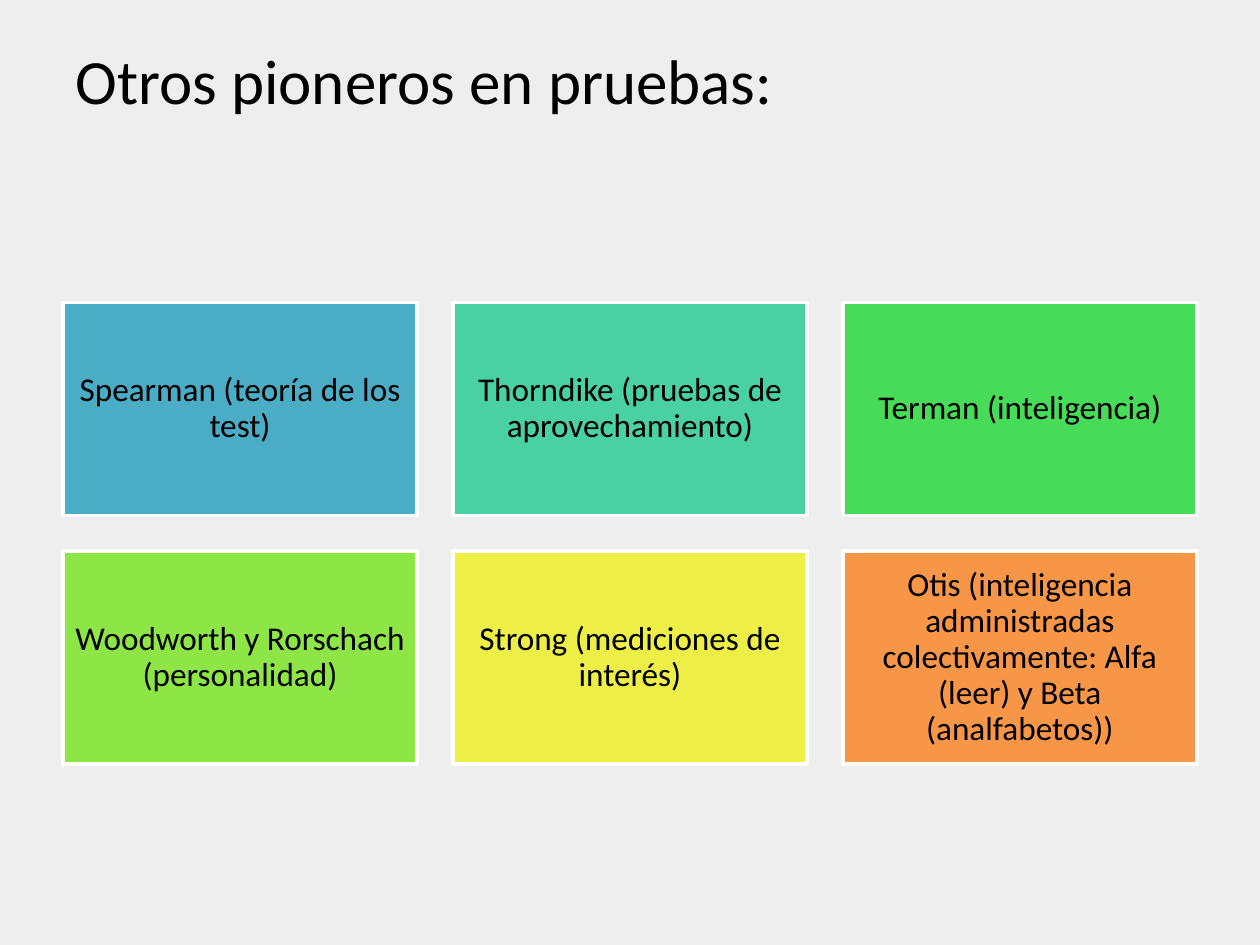
from dataclasses import dataclass

from pptx import Presentation
from pptx.dml.color import RGBColor
from pptx.enum.shapes import MSO_SHAPE
from pptx.enum.text import MSO_ANCHOR, PP_ALIGN
from pptx.util import Cm, Pt


@dataclass(frozen=True)
class Theme:
    font: str = "Calibri"
    ink: str = "000000"
    back: str = "EEEEEE"
    edge: str = "FFFFFF"
    head: int = 36
    body: int = 19


THEME = Theme()

# Card text and fill, row by row
CARDS = [
    ("Spearman (teoría de los test)", "4BACC6"),
    ("Thorndike (pruebas de aprovechamiento)", "49D1A3"),
    ("Terman (inteligencia)", "47DC57"),
    ("Woodworth y Rorschach (personalidad)", "8DE646"),
    ("Strong (mediciones de interés)", "EEEF46"),
    ("Otis (inteligencia administradas colectivamente: "
     "Alfa (leer) y Beta (analfabetos))", "F79646"),
]

# Card grid, in cm
COLS = 3
LEFT, TOP = 1.27, 6.1
WIDE, HIGH, GAP = 7.14, 4.29, 0.72


def apply(item, values):
    for name, value in values.items():
        setattr(item, name, value)


def paint(fill, color):
    fill.solid()
    fill.fore_color.rgb = RGBColor.from_string(color)


def write(shape, text, size, frame, para):
    box = shape.text_frame
    box.text = text
    apply(box, {"word_wrap": True, **frame})
    line = box.paragraphs[0]
    apply(line, para)
    font = line.runs[0].font
    apply(font, {"name": THEME.font, "size": Pt(size), "bold": False})
    font.color.rgb = RGBColor.from_string(THEME.ink)


def add_title(slide, text):
    title = slide.shapes.title
    apply(title, {"left": Cm(1.27), "top": Cm(-0.69),
                  "width": Cm(22.86), "height": Cm(3.18)})
    write(title, text, THEME.head,
          {"vertical_anchor": MSO_ANCHOR.BOTTOM},
          {"alignment": PP_ALIGN.LEFT})


def add_card(slide, index, text, color):
    row, col = divmod(index, COLS)
    card = slide.shapes.add_shape(
        MSO_SHAPE.RECTANGLE,
        Cm(LEFT + col * (WIDE + GAP)), Cm(TOP + row * (HIGH + GAP)),
        Cm(WIDE), Cm(HIGH))
    card.shadow.inherit = False
    paint(card.fill, color)
    paint(card.line.fill, THEME.edge)
    card.line.width = Pt(2)
    sides = ("left", "top", "right", "bottom")
    pads = {f"margin_{side}": Cm(0.2) for side in sides}
    write(card, text, THEME.body,
          {"vertical_anchor": MSO_ANCHOR.MIDDLE, **pads},
          {"alignment": PP_ALIGN.CENTER, "line_spacing": 0.9})


def main():
    deck = Presentation()
    apply(deck, {"slide_width": Cm(25.4), "slide_height": Cm(19.05)})
    slide = deck.slides.add_slide(deck.slide_layouts.get_by_name("Title Only"))
    paint(slide.background.fill, THEME.back)

    # Heading
    add_title(slide, "Otros pioneros en pruebas:")

    # Grid of pioneers
    for index, (text, color) in enumerate(CARDS):
        add_card(slide, index, text, color)

    deck.save("out.pptx")


if __name__ == "__main__":
    main()
